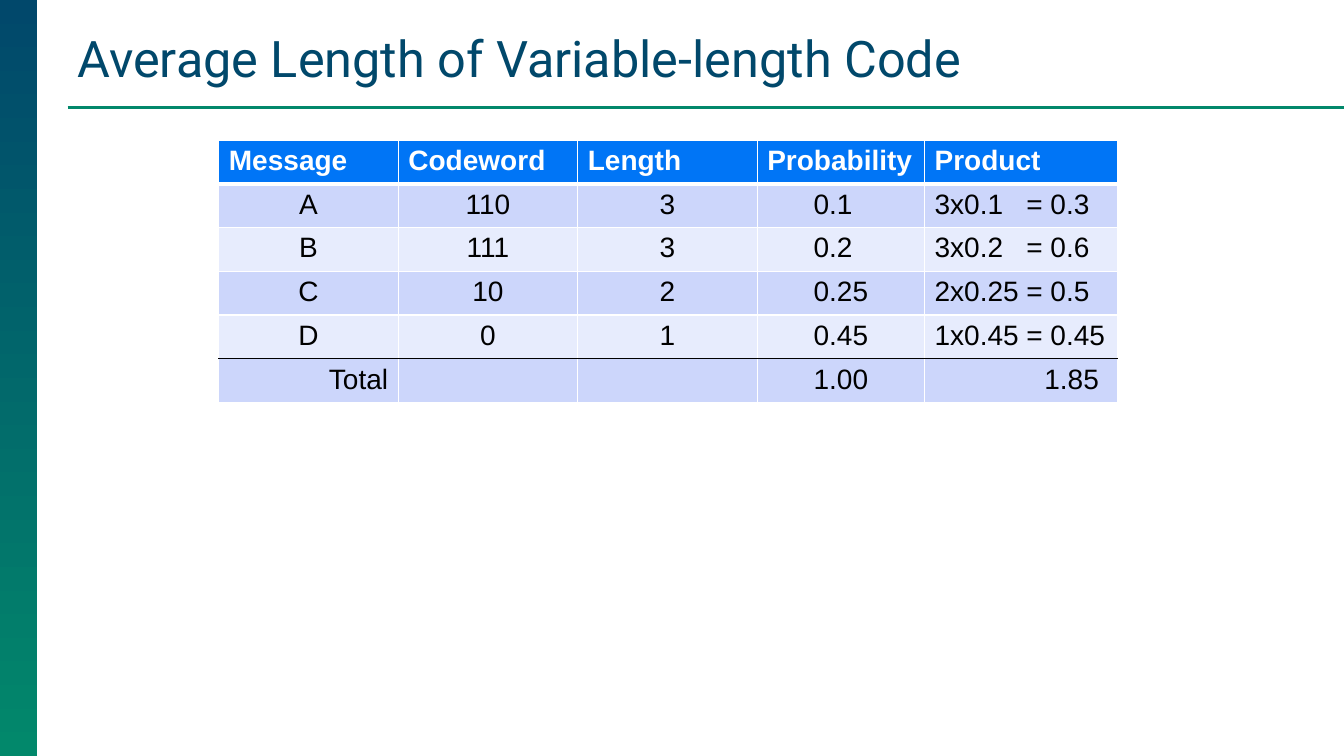
from lxml import etree
from pptx import Presentation
from pptx.dml.color import RGBColor
from pptx.enum.shapes import MSO_CONNECTOR, MSO_SHAPE
from pptx.enum.text import MSO_ANCHOR, PP_ALIGN
from pptx.oxml.ns import qn
from pptx.util import Inches, Pt

RECT = MSO_SHAPE.RECTANGLE
LINE = MSO_CONNECTOR.STRAIGHT
BOTTOM = MSO_ANCHOR.BOTTOM
LEFT, CENTER, RIGHT = PP_ALIGN.LEFT, PP_ALIGN.CENTER, PP_ALIGN.RIGHT

COLORS = {
    "navy": "01486B", "green": "02886B", "head": "0075F6",
    "dark": "CCD6FB", "light": "E7ECFD", "white": "FFFFFF", "black": "000000",
}
WIDTHS = [1.78, 1.78, 1.78, 1.66, 1.91]
HEIGHT = 0.41
ALIGNS = [CENTER, CENTER, CENTER, LEFT, LEFT]
ROWS = [
    ["Message", "Codeword", "Length", "Probability", "Product"],
    ["A", "110", "3", "0.1", "3x0.1\t= 0.3"],
    ["B", "111", "3", "0.2", "3x0.2\t= 0.6"],
    ["C", "10", "2", "0.25", "2x0.25\t= 0.5"],
    ["D", "0", "1", "0.45", "1x0.45\t= 0.45"],
    ["Total", "", "", "1.00", "1.85"],
]
PROB, PRODUCT = 3, 4
LAST = len(ROWS) - 1


def color(name):
    return RGBColor.from_string(COLORS[name])


def write(frame, text, font="Arial", size=20, tint="black", bold=False,
          align=LEFT, tab=None):
    para = frame.paragraphs[0]
    para.alignment = align
    if tab:
        stops = etree.SubElement(para._p.get_or_add_pPr(), qn("a:tabLst"))
        etree.SubElement(stops, qn("a:tab"), pos=str(Inches(tab)), algn="l")
    run = para.add_run()
    run.text = text
    run.font.name = font
    run.font.size = Pt(size)
    run.font.bold = bold
    run.font.color.rgb = color(tint)


def add_band(slide):
    band = slide.shapes.add_shape(RECT, 0, 0, Inches(0.37), Inches(7.5))
    band.shadow.inherit = False
    band.line.fill.background()
    band.fill.gradient()
    band.fill.gradient_angle = 270
    for stop, name in zip(band.fill.gradient_stops, ("navy", "green")):
        stop.color.rgb = color(name)


def add_rule(slide):
    rule = slide.shapes.add_connector(
        LINE, Inches(0.67), Inches(1.07), Inches(13.33), Inches(1.07))
    rule.line.color.rgb = color("green")
    rule.line.width = Pt(2.25)
    etree.SubElement(rule._element.spPr, qn("a:effectLst"))


def add_title(slide, text):
    box = slide.shapes.add_textbox(
        Inches(0.67), Inches(0.21), Inches(12.38), Inches(0.71))
    frame = box.text_frame
    frame.word_wrap = True
    frame.vertical_anchor = BOTTOM
    write(frame, text, font="Roboto", size=36, tint="navy")


def add_edge(cell, side, name, width):
    edge = etree.SubElement(
        cell._tc.get_or_add_tcPr(), qn("a:ln" + side), w=str(Pt(width)))
    fill = etree.SubElement(edge, qn("a:solidFill"))
    etree.SubElement(fill, qn("a:srgbClr"), val=COLORS[name])


def style_cell(cell, row):
    top = ("black", 1) if row == LAST else ("white", 3 if row == 1 else 1)
    base = ("black", 1) if row == LAST - 1 else ("white", 1 if row else 3)
    edges = {"L": ("white", 1), "R": ("white", 1), "T": top, "B": base}
    for side, (name, width) in edges.items():
        add_edge(cell, side, name, width)
    cell.fill.solid()
    shade = "dark" if row % 2 else "light"
    cell.fill.fore_color.rgb = color(shade if row else "head")


def fill_cell(cell, row, col, text):
    if row == 0:
        cell.margin_right = Inches(0.05)
        write(cell.text_frame, text, tint="white", bold=True)
        return
    align = ALIGNS[col]
    if col == PROB:
        cell.margin_left = Inches(0.56)
    elif col == PRODUCT:
        cell.margin_right = Inches(0.18 if row == LAST else 0.05)
    if row == LAST and col in (0, PRODUCT):
        align = RIGHT
    write(cell.text_frame, text, align=align,
          tab=0.91 if "\t" in text else None)


def add_codes(slide):
    table = slide.shapes.add_table(
        len(ROWS), len(WIDTHS), Inches(2.17), Inches(1.39),
        Inches(sum(WIDTHS)), Inches(HEIGHT * len(ROWS))).table
    for column, width in zip(table.columns, WIDTHS):
        column.width = Inches(width)
    for row, texts in enumerate(ROWS):
        table.rows[row].height = Inches(HEIGHT)
        for col, text in enumerate(texts):
            cell = table.cell(row, col)
            style_cell(cell, row)
            if text:
                fill_cell(cell, row, col, text)


def main():
    deck = Presentation()
    deck.slide_width = Inches(13.33)
    deck.slide_height = Inches(7.5)
    slide = deck.slides.add_slide(deck.slide_layouts[6])
    add_band(slide)
    add_rule(slide)
    add_title(slide, "Average Length of Variable-length Code")
    add_codes(slide)
    deck.save("out.pptx")


if __name__ == "__main__":
    main()
